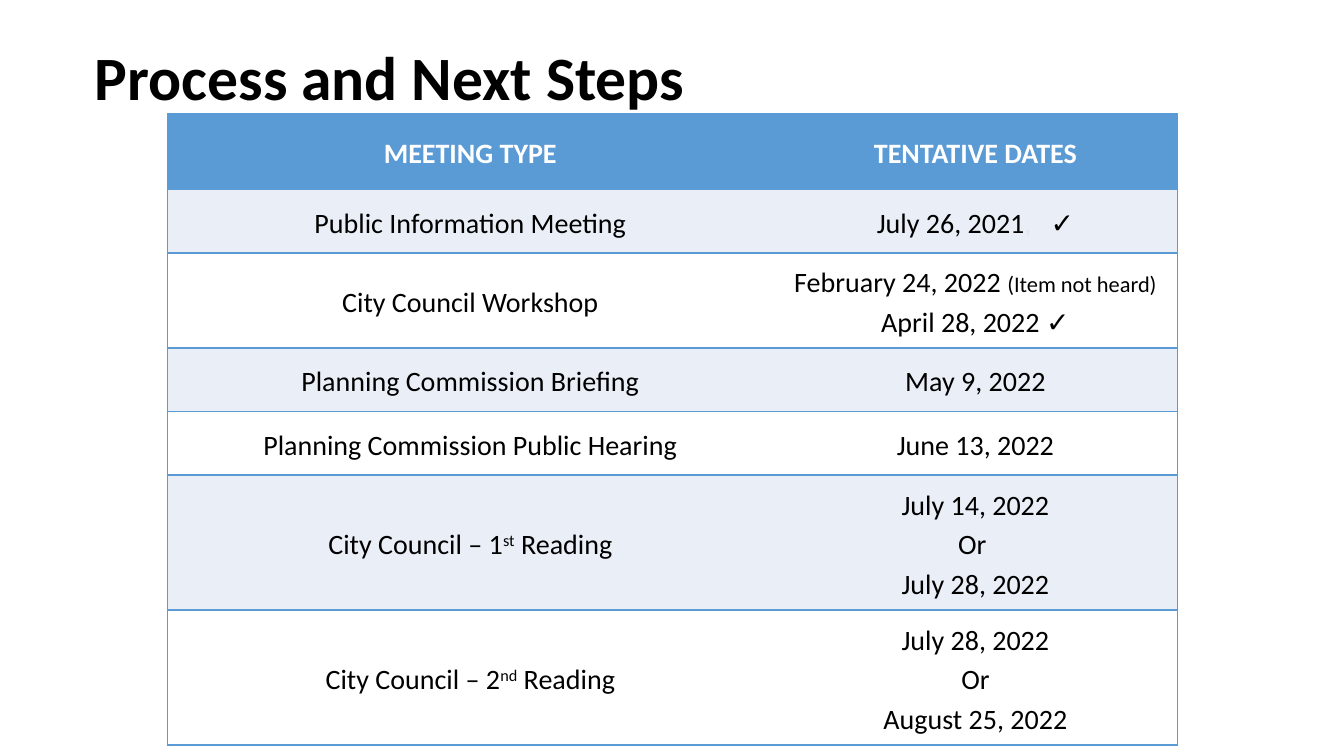
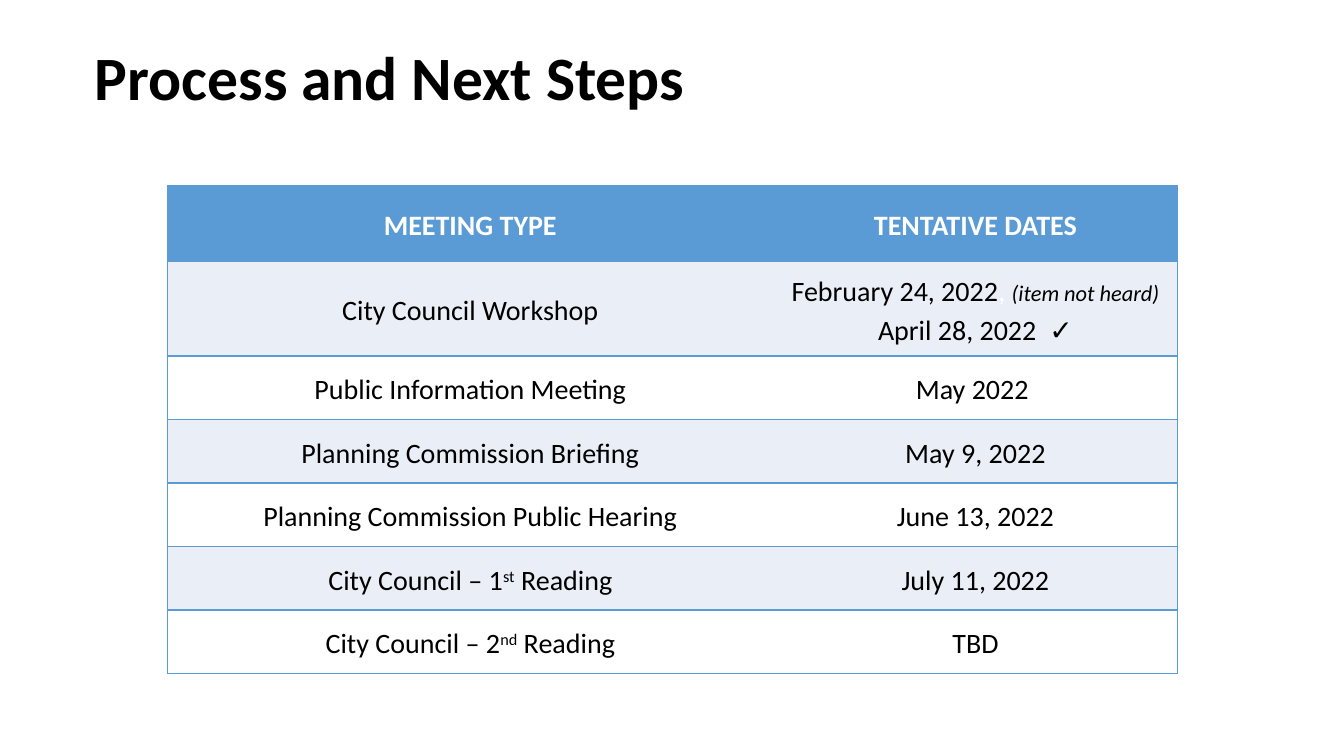
from pptx import Presentation
from pptx.dml.color import RGBColor
from pptx.enum.text import MSO_ANCHOR, MSO_AUTO_SIZE, PP_ALIGN
from pptx.oxml import parse_xml
from pptx.oxml.ns import nsdecls, qn
from pptx.util import Inches, Pt

BLACK = RGBColor(0x00, 0x00, 0x00)
WHITE = RGBColor(0xFF, 0xFF, 0xFF)
BLUE = RGBColor(0x5B, 0x9B, 0xD5)
PALE = RGBColor(0xEA, 0xEF, 0xF7)
GREY = RGBColor(0xE7, 0xE6, 0xE6)
PLAIN = "{2D5ABB26-0587-4C30-8999-92F81FD0307C}"

TITLE = "Process and Next Steps"
HEAD = ("MEETING TYPE", "TENTATIVE DATES")
INFO = "Public Information Meeting"
SHOP = "City Council Workshop"
BRIEF = ("Planning Commission Briefing", ["May 9, 2022"])
HEARING = ("Planning Commission Public Hearing", ["June 13, 2022"])
FIRST = ["City Council – 1", ("st", {"base": 30}), " Reading"]
SECOND = ["City Council – 2", ("nd", {"base": 30}), " Reading"]

SLIDES = [
    (1.13, [
        (INFO, [["July 26, 2021", (", ", {"color": GREY, "track": 4.5}), "✓"]]),
        (SHOP, [["February 24, 2022 ", ("(Item not heard)", {"size": 16})],
                "April 28, 2022 ✓"]),
        BRIEF,
        HEARING,
        (FIRST, ["July 14, 2022", "Or ", "July 28, 2022"]),
        (SECOND, ["July 28, 2022", "Or", "August 25, 2022"]),
    ]),
    (1.84, [
        (SHOP, [["February 24, 2022", (", ", {"color": WHITE}),
                 ("(item not heard)", {"size": 16, "italic": True})],
                ["April 28, 2022", (" ", {"track": 4.5}), "✓"]]),
        (INFO, ["May 2022 "]),
        BRIEF,
        HEARING,
        (FIRST, ["July 11, 2022"]),
        (SECOND, ["TBD"]),
    ]),
]

LEFT = 1.66
COLS = (6.01, 4.01)
TOP_ROW = 0.75
HEIGHTS = {1: 0.63, 2: 0.94, 3: 1.34}


def write(frame, lines, align=PP_ALIGN.CENTER, line=1.15, gap=0, **base):
    for i, runs in enumerate(lines):
        para = frame.paragraphs[0] if i == 0 else frame.add_paragraph()
        para.alignment = align
        para.line_spacing = line
        para.space_before = Pt(0)
        para.space_after = Pt(gap)
        for part in [runs] if isinstance(runs, str) else runs:
            text, extra = (part, {}) if isinstance(part, str) else part
            form = {"size": 20, "color": BLACK, **base, **extra}
            run = para.add_run()
            run.text = text
            font = run.font
            font.name = "Calibri"
            font.size = Pt(form["size"])
            font.bold = form.get("bold", False)
            font.italic = form.get("italic", False)
            font.color.rgb = form["color"]
            props = run._r.get_or_add_rPr()
            if "base" in form:
                props.set("baseline", str(form["base"] * 1000))
            if "track" in form:
                props.set("spc", str(int(form["track"] * 100)))


def border(cell, sides):
    props = cell._tc.get_or_add_tcPr()
    for side in sides:
        props.append(parse_xml(
            f'<a:ln{side} {nsdecls("a")} w="12700"><a:solidFill>'
            f'<a:srgbClr val="{BLUE}"/></a:solidFill></a:ln{side}>'))


def fill_cell(cell, lines, fill, sides, **form):
    cell.margin_left = cell.margin_right = Inches(0.04)
    cell.margin_top = cell.margin_bottom = Inches(0.08)
    cell.vertical_anchor = MSO_ANCHOR.MIDDLE
    border(cell, sides)
    cell.fill.solid()
    cell.fill.fore_color.rgb = fill
    write(cell.text_frame, lines, **form)


def add_grid(slide, top, items):
    sizes = [TOP_ROW] + [HEIGHTS[len(dates)] for _, dates in items]
    table = slide.shapes.add_table(
        len(sizes), len(COLS), Inches(LEFT), Inches(top),
        Inches(sum(COLS)), Inches(sum(sizes))).table
    table.horz_banding = False
    table._tbl.tblPr.find(qn("a:tableStyleId")).text = PLAIN
    for col, width in zip(table.columns, COLS):
        col.width = Inches(width)
    for row, size in zip(table.rows, sizes):
        row.height = Inches(size)
    rows = [([HEAD[0]], [HEAD[1]])] + [([name], dates) for name, dates in items]
    for r, row in enumerate(rows):
        fill = BLUE if r == 0 else PALE if r % 2 else WHITE
        form = {"color": WHITE, "bold": True, "gap": 6} if r == 0 else {}
        for c, lines in enumerate(row):
            fill_cell(table.cell(r, c), lines, fill, "RTB" if c else "LTB", **form)


def main():
    deck = Presentation()
    deck.slide_width, deck.slide_height = Inches(13.33), Inches(7.5)
    layout = deck.slide_layouts[5]
    head = layout.placeholders[0]
    head.left, head.top = Inches(0.84), Inches(0.33)
    head.width, head.height = Inches(6.94), Inches(0.84)
    for top, items in SLIDES:
        slide = deck.slides.add_slide(layout)
        frame = slide.shapes.title.text_frame
        frame.auto_size = MSO_AUTO_SIZE.NONE
        write(frame, [TITLE], align=PP_ALIGN.LEFT, line=1.0, size=44, bold=True)
        add_grid(slide, top, items)
    deck.save("out.pptx")


if __name__ == "__main__":
    main()
